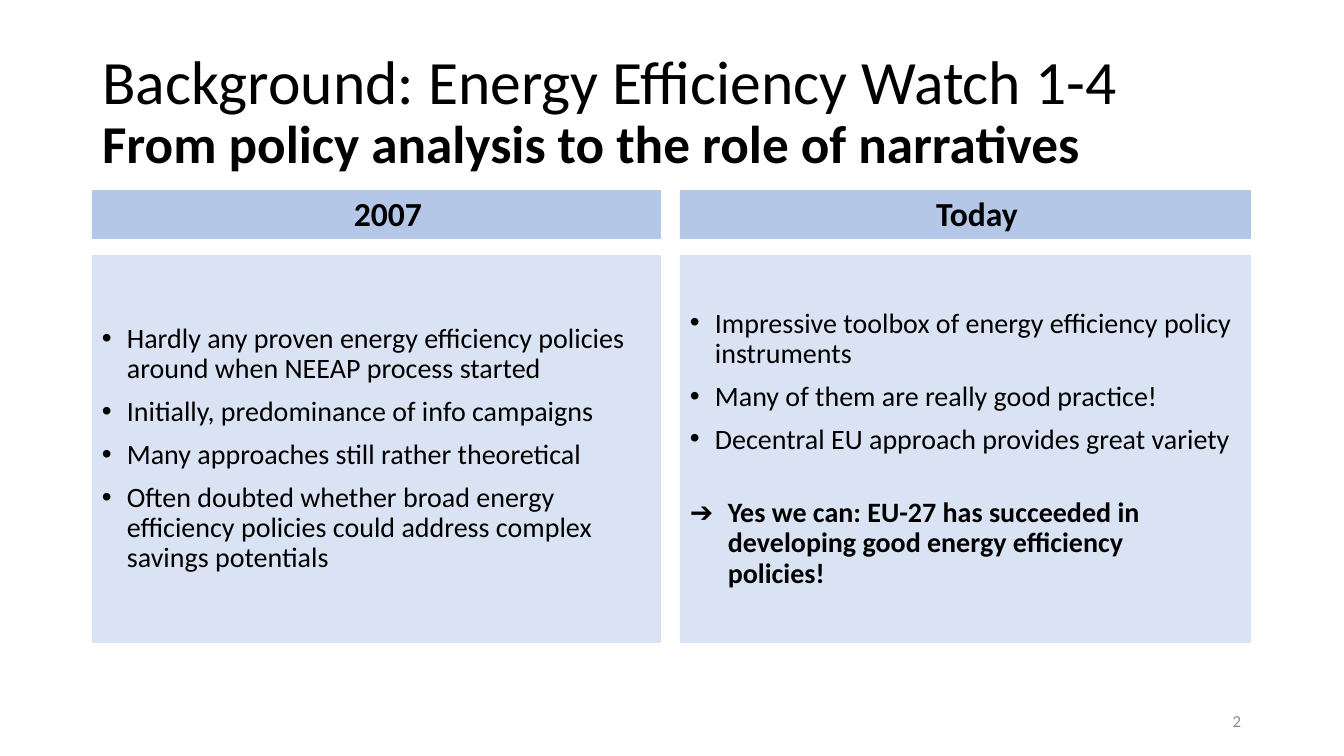
from lxml.etree import SubElement
from pptx import Presentation
from pptx.dml.color import RGBColor
from pptx.enum.shapes import MSO_SHAPE as Shape
from pptx.enum.text import MSO_ANCHOR as Anchor, MSO_AUTO_SIZE as Fit, PP_ALIGN as Align
from pptx.oxml.ns import qn
from pptx.util import Pt

BLACK = RGBColor(0x00, 0x00, 0x00)
GREY = RGBColor(0x8C, 0x8C, 0x8C)
MID = RGBColor(0xB4, 0xC7, 0xE7)
PALE = RGBColor(0xDA, 0xE3, 0xF3)
PX = 914400 / 100.8


def px(n):
    return round(n * PX)


def write(para, text, size, bold=False, color=BLACK, **form):
    """Add text, one run a line, to a paragraph; form holds paragraph attributes."""
    for key, val in form.items():
        setattr(para, key, val)
    look = {"name": "Calibri", "size": Pt(size), "bold": bold}
    for i, line in enumerate(text.split("\n")):
        if i:
            para.add_line_break()
        run = para.add_run()
        run.text = line
        for key, val in look.items():
            setattr(run.font, key, val)
        run.font.color.rgb = color


deck = Presentation()
deck.slide_width, deck.slide_height = px(1344), px(756)
slide = deck.slides.add_slide(deck.slide_layouts[5])

# Title
title = slide.shapes.title
place = {"left": 92, "top": 40, "width": 1160, "height": 146}
for key, val in place.items():
    setattr(title, key, px(val))
frame = title.text_frame
frame.auto_size = Fit.NONE
frame.vertical_anchor = Anchor.MIDDLE
para = frame.paragraphs[0]
write(para, "Background: Energy Efficiency Watch 1-4", 44,
      alignment=Align.LEFT, line_spacing=0.9)
para.add_line_break()
write(para, "From policy analysis to the role of narratives", 38, True)

# Two columns: left, width, heading, bullets and closing message
COLS = [
    (92, 569, "2007", [
        "Hardly any proven energy efficiency policies around when NEEAP process started",
        "Initially, predominance of info campaigns",
        "Many approaches still rather theoretical",
        "Often doubted whether broad energy efficiency policies could address "
        "complex savings potentials",
    ], None),
    (680, 571, "Today", [
        "Impressive toolbox of energy efficiency policy instruments",
        "Many of them are really good practice!",
        "Decentral EU approach provides great variety",
    ], "Yes we can: EU-27 has succeeded in\ndeveloping good energy efficiency\npolicies!"),
]
FORM = {"alignment": Align.LEFT, "line_spacing": 0.9, "space_after": Pt(9)}

for left, width, head, items, close in COLS:
    frames = []
    for top, height, fill, anchor in ((190, 49, MID, Anchor.BOTTOM),
                                      (255, 388, PALE, Anchor.MIDDLE)):
        box = slide.shapes.add_shape(Shape.RECTANGLE, px(left), px(top), px(width), px(height))
        box.shadow.inherit = False
        box.fill.solid()
        box.fill.fore_color.rgb = fill
        box.line.fill.background()
        box.text_frame.word_wrap = True
        box.text_frame.vertical_anchor = anchor
        frames.append(box.text_frame)

    label, body = frames
    label.margin_left = px(33)
    write(label.paragraphs[0], head, 24, True, alignment=Align.CENTER, line_spacing=0.9)

    for i, text in enumerate(items):
        para = body.add_paragraph() if i else body.paragraphs[0]
        props = para._p.get_or_add_pPr()
        props.set("marL", str(px(25)))
        props.set("indent", str(-px(25)))
        SubElement(props, qn("a:buFont"), typeface="Arial")
        SubElement(props, qn("a:buChar"), char="•")
        write(para, text, 20, **FORM)

    if close:
        para = body.add_paragraph()
        props = para._p.get_or_add_pPr()
        props.set("marL", str(px(38)))
        props.set("indent", str(-px(38)))
        write(para, "➔\t", 20, space_before=Pt(22), **FORM)
        write(para, close, 20, True)

# Page number
page = slide.shapes.add_textbox(px(949), px(701), px(302), px(40)).text_frame
page.word_wrap = True
page.vertical_anchor = Anchor.MIDDLE
write(page.paragraphs[0], "2", 12, color=GREY, alignment=Align.RIGHT)

deck.save("out.pptx")
